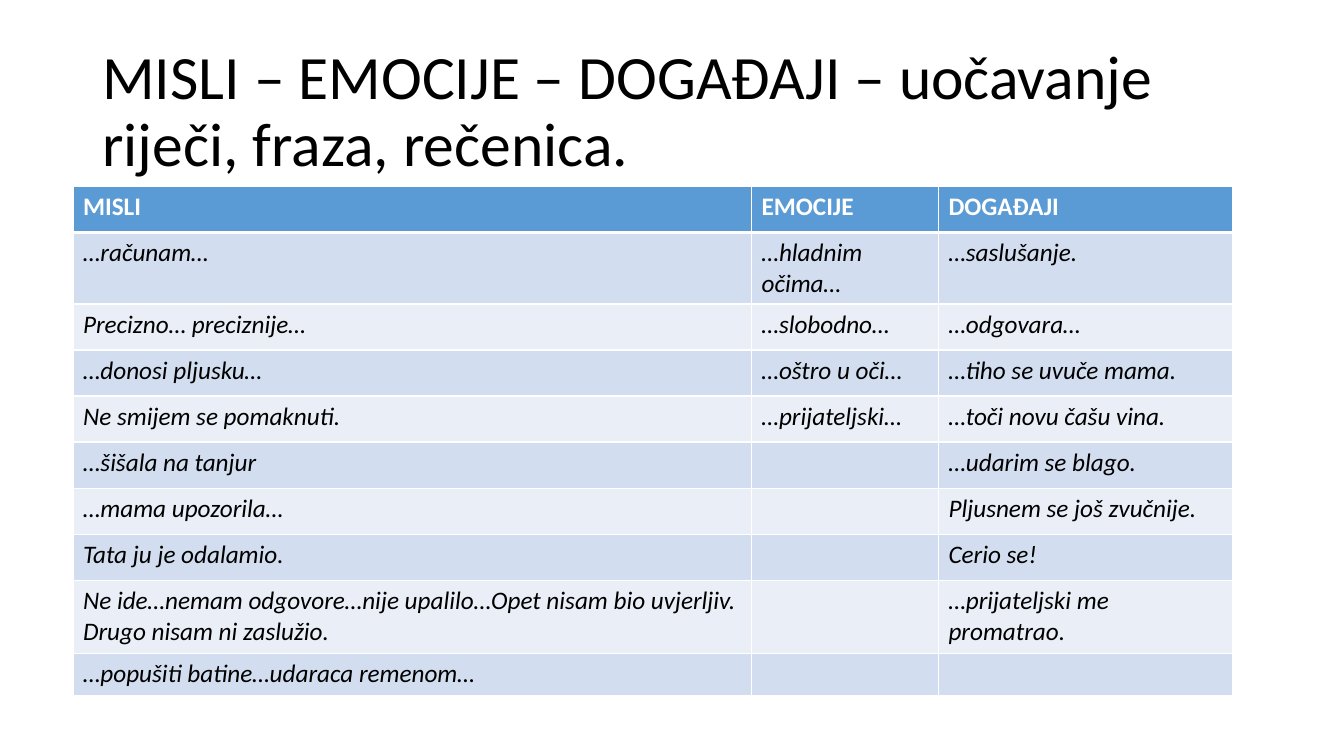
from dataclasses import dataclass

from lxml import etree
from pptx import Presentation
from pptx import util as u
from pptx.dml.color import RGBColor
from pptx.enum import text
from pptx.oxml import ns


@dataclass(frozen=True)
class Theme:
    font: str = "Calibri"
    ink: str = "000000"
    white: str = "FFFFFF"
    head: str = "5B9BD5"
    bands: tuple = ("D2DEEF", "EAEFF7")
    title: int = 44
    body: int = 18


THEME = Theme()
TITLE = "MISLI – EMOCIJE – DOGAĐAJI – uočavanje riječi, fraza, rečenica."
ROWS = [
    ("MISLI", "EMOCIJE", "DOGAĐAJI"),
    ("…računam…", "…hladnim očima…", "…saslušanje."),
    ("Precizno… preciznije…", "…slobodno…", "…odgovara…"),
    ("…donosi pljusku…", "…oštro u oči…", "…tiho se uvuče mama."),
    ("Ne smijem se pomaknuti.", "…prijateljski…", "…toči novu čašu vina."),
    ("…šišala na tanjur", "", "…udarim se blago."),
    ("…mama upozorila…", "", "Pljusnem se još zvučnije."),
    ("Tata ju je odalamio.", "", "Cerio se!"),
    ("Ne ide…nemam odgovore…nije upalilo…Opet nisam bio uvjerljiv. "
     "Drugo nisam ni zaslužio.", "", "…prijateljski me promatrao."),
    ("…popušiti batine…udaraca remenom…", "", ""),
]
WIDTHS = (17.1, 4.71, 7.4)
HEIGHTS = (1.16, 1.8, *[1.16] * 6, 1.85, 1.07)


def write(frame, words, size=THEME.body, color=THEME.ink, bold=False,
          italic=False, space=1.0):
    para = frame.paragraphs[0]
    para.line_spacing = space
    font = para.font
    if words:
        run = para.add_run()
        run.text = words
        font = run.font
    font.name, font.size = THEME.font, u.Pt(size)
    font.bold, font.italic = bold, italic
    font.color.rgb = RGBColor.from_string(color)


def add_title(slide, words):
    box = slide.shapes.add_textbox(u.Cm(2.33), u.Cm(1.01), u.Cm(29.21), u.Cm(3.68))
    frame = box.text_frame
    frame.word_wrap = True
    frame.vertical_anchor = text.MSO_ANCHOR.MIDDLE
    write(frame, words, size=THEME.title, space=0.9)


def edge(cell, side, width):
    """Draw one white border; fills must be set later to keep XML order."""
    props = cell._tc.get_or_add_tcPr()
    line = etree.SubElement(props, ns.qn(f"a:ln{side}"), w=str(u.Pt(width)))
    fill = etree.SubElement(line, ns.qn("a:solidFill"))
    etree.SubElement(fill, ns.qn("a:srgbClr"), val=THEME.white)


def add_cell(cell, words, row):
    head = row == 0
    for side in "LRTB":
        thick = (head and side == "B") or (row == 1 and side == "T")
        edge(cell, side, 3 if thick else 1)
    cell.fill.solid()
    shade = THEME.head if head else THEME.bands[(row - 1) % 2]
    cell.fill.fore_color.rgb = RGBColor.from_string(shade)
    write(cell.text_frame, words, color=THEME.white if head else THEME.ink,
          bold=head, italic=not head)


def add_grid(slide, rows):
    table = slide.shapes.add_table(
        len(rows), len(WIDTHS), u.Cm(1.84), u.Cm(4.7),
        u.Cm(sum(WIDTHS)), u.Cm(sum(HEIGHTS))).table
    for col, width in zip(table.columns, WIDTHS):
        col.width = u.Cm(width)
    for line, height in zip(table.rows, HEIGHTS):
        line.height = u.Cm(height)
    for row, line in enumerate(rows):
        for col, words in enumerate(line):
            add_cell(table.cell(row, col), words, row)


def main():
    deck = Presentation()
    deck.slide_width, deck.slide_height = u.Cm(33.87), u.Cm(19.05)
    slide = deck.slides.add_slide(deck.slide_layouts[6])
    add_title(slide, TITLE)
    add_grid(slide, ROWS)
    deck.save("out.pptx")


if __name__ == "__main__":
    main()
